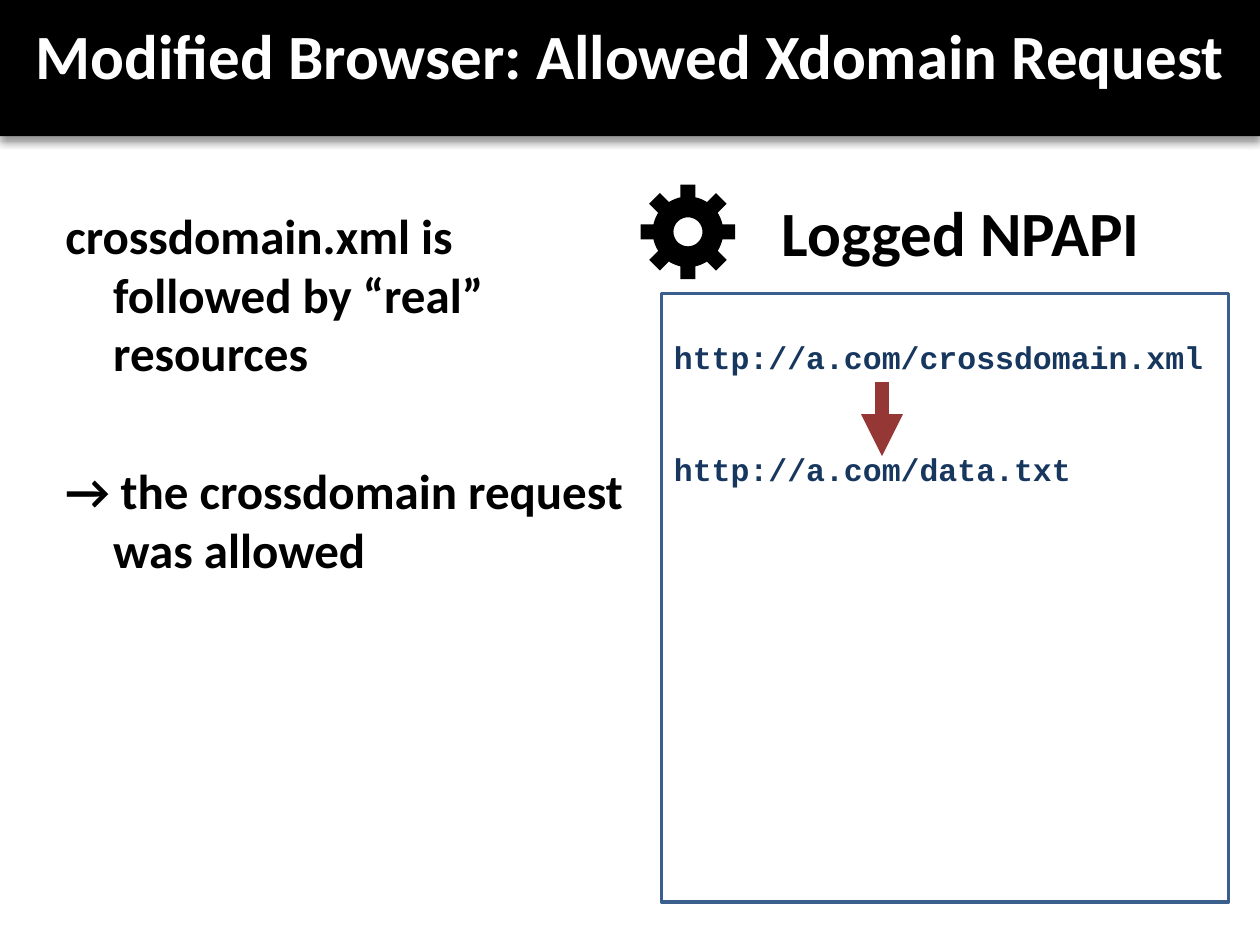
import math
from dataclasses import dataclass

from lxml import etree
from pptx import Presentation
from pptx.dml.color import RGBColor
from pptx.enum import shapes, text
from pptx.oxml import ns
from pptx.util import Inches, Pt


@dataclass(frozen=True)
class Theme:
    black: RGBColor = RGBColor(0x00, 0x00, 0x00)
    white: RGBColor = RGBColor(0xFF, 0xFF, 0xFF)
    frame: RGBColor = RGBColor(0x3A, 0x5F, 0x8C)
    url: RGBColor = RGBColor(0x17, 0x37, 0x5E)
    arrow: RGBColor = RGBColor(0x95, 0x37, 0x35)
    sans: str = "Calibri"
    mono: str = "Courier New"
    title_size: Pt = Pt(36)
    body_size: Pt = Pt(28)
    url_size: Pt = Pt(18)


THEME = Theme()


def add_xml(parent, tag, **attributes):
    return etree.SubElement(parent, ns.qn(tag), attributes)


def inches(*lengths):
    return [Inches(length) for length in lengths]


def write(frame, lines, font, size, color, align=text.PP_ALIGN.LEFT,
          hang=0, gap=Pt(0)):
    """Fill a frame with bold paragraphs, set apart by gap, with a hanging indent."""
    frame.word_wrap = True
    for index, line in enumerate(lines):
        para = frame.paragraphs[0] if index == 0 else frame.add_paragraph()
        para.text = line
        para.alignment = align
        para.space_before = gap if index else Pt(0)
        para.font.name = font
        para.font.size = size
        para.font.bold = True
        para.font.color.rgb = color
        if hang:
            properties = para._p.get_or_add_pPr()
            properties.set("marL", str(Inches(hang)))
            properties.set("indent", str(Inches(-hang)))


def add_header(page, title_text):
    title = page.shapes.title
    band = page.shapes.add_shape(
        shapes.MSO_SHAPE.RECTANGLE, *inches(0, 0, 10, 1.08))
    band.fill.solid()
    band.fill.fore_color.rgb = THEME.black
    band.line.fill.background()
    effects = add_xml(band.element.spPr, "a:effectLst")
    shadow = add_xml(effects, "a:outerShdw", blurRad=str(Pt(4)),
                     dist=str(Pt(4)), dir="5400000", rotWithShape="0")
    color = add_xml(shadow, "a:srgbClr", val=str(THEME.black))
    add_xml(color, "a:alpha", val="40000")
    title.element.addprevious(band.element)

    title.left, title.top, title.width, title.height = inches(0, 0.08, 10, 1.25)
    frame = title.text_frame
    frame.vertical_anchor = text.MSO_ANCHOR.TOP
    frame.auto_size = text.MSO_AUTO_SIZE.NONE
    write(frame, [title_text], THEME.sans, THEME.title_size, THEME.white,
          text.PP_ALIGN.CENTER)


def add_text(page, place, lines, size, anchor=text.MSO_ANCHOR.TOP, **layout):
    frame = page.shapes.add_textbox(*inches(*place)).text_frame
    frame.vertical_anchor = anchor
    write(frame, lines, THEME.sans, size, THEME.black, **layout)
    return frame


def add_log(page, place, urls):
    panel = page.shapes.add_shape(shapes.MSO_SHAPE.RECTANGLE, *inches(*place))
    panel.shadow.inherit = False
    panel.fill.background()
    panel.line.color.rgb = THEME.frame
    panel.line.width = Pt(2)
    frame = panel.text_frame
    frame.vertical_anchor = text.MSO_ANCHOR.TOP
    frame.margin_top = Inches(0.35)
    write(frame, urls, THEME.mono, THEME.url_size, THEME.url, hang=0.5,
          gap=Pt(42.8))


def add_gear(page, x, y, reach=0.375, body=0.28, hole=0.115, half_tooth=0.06,
             teeth=8):
    """Draw a gear centred on x, y; lengths are in inches."""
    def point(radius, angle):
        return (Inches(x + radius * math.cos(angle)),
                Inches(y + radius * math.sin(angle)))

    pitch = math.tau / teeth
    root = math.asin(half_tooth / body)
    tip = math.atan2(half_tooth, reach)
    corner = math.hypot(reach, half_tooth)
    steps = 6
    rim = []
    for tooth in range(teeth):
        middle = tooth * pitch
        rim += [point(corner, middle - tip), point(corner, middle + tip)]
        rim += [point(body, middle + root + (pitch - 2 * root) * step / steps)
                for step in range(steps + 1)]
    circle = [point(hole, -math.tau * step / 36) for step in range(36)]

    builder = page.shapes.build_freeform(*rim[0])
    builder.add_line_segments(rim[1:], close=True)
    builder.move_to(*circle[0])
    builder.add_line_segments(circle[1:], close=True)
    gear = builder.convert_to_shape()
    gear.shadow.inherit = False
    gear.fill.solid()
    gear.fill.fore_color.rgb = THEME.black
    gear.line.fill.background()


def add_arrow(page, start, end):
    arrow = page.shapes.add_connector(
        shapes.MSO_CONNECTOR.STRAIGHT, *inches(*start, *end))
    arrow.line.color.rgb = THEME.arrow
    arrow.line.width = Pt(8)
    add_xml(arrow.line._get_or_add_ln(), "a:tailEnd", type="triangle")
    add_xml(arrow.element.spPr, "a:effectLst")


def main():
    deck = Presentation()
    deck.slide_width, deck.slide_height = inches(10, 7.5)
    page = deck.slides.add_slide(deck.slide_layouts.get_by_name("Title Only"))

    add_header(page, "Modified Browser: Allowed Xdomain Request")
    add_log(page, (5.25, 2.33, 4.5, 4.83),
            ["http://a.com/crossdomain.xml", "http://a.com/data.txt"])
    add_text(page, (5.5, 1.25, 4.25, 1.17), ["Logged NPAPI"],
             THEME.title_size, text.MSO_ANCHOR.MIDDLE,
             align=text.PP_ALIGN.CENTER)
    add_gear(page, 5.46, 1.84)
    findings = add_text(
        page, (0.42, 1.58, 4.75, 3.12),
        ["crossdomain.xml is followed by “real” resources",
         "→ the crossdomain request was allowed"],
        THEME.body_size, hang=0.38, gap=Pt(45))
    findings.auto_size = text.MSO_AUTO_SIZE.SHAPE_TO_FIT_TEXT
    add_arrow(page, (7, 3.03), (7, 3.62))
    deck.save("out.pptx")


if __name__ == "__main__":
    main()
